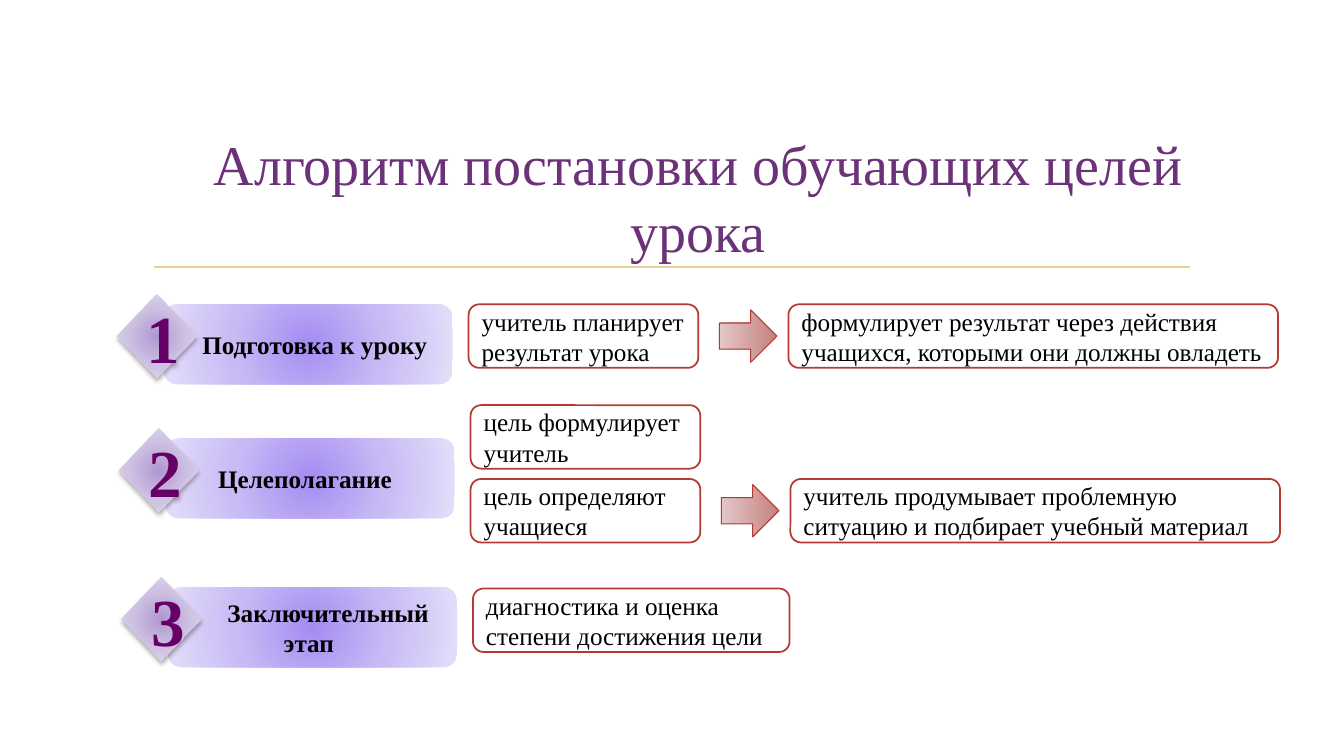
from dataclasses import dataclass

from lxml import etree
from pptx import Presentation
from pptx import util as u
from pptx.dml.color import RGBColor
from pptx.enum import shapes, text
from pptx.oxml import parse_xml
from pptx.oxml.ns import nsdecls, qn


@dataclass
class Theme:
    font: str = "Times New Roman"
    title: str = "6B327A"
    rule: str = "E8D191"
    ink: str = "000000"
    number: str = "660066"
    paper: str = "FFFFFF"
    outline: str = "B53A31"
    bar: tuple = ("A58CF2", "C7BAF5", "E4DEF9")
    diamond: tuple = ("B197D2", "CEC1E2", "E7E1F0")
    arrow: tuple = ("E4C8C8", "C5817E")
    title_size: int = 40
    number_size: int = 48
    body_size: int = 18


T = Theme()
LEFT, CENTER = text.PP_ALIGN.LEFT, text.PP_ALIGN.CENTER
KIND = shapes.MSO_SHAPE
RADIAL = '<a:path path="circle"><a:fillToRect l="50000" t="50000" r="50000" b="50000"/></a:path>'
LINEAR = '<a:lin ang="0" scaled="0"/>'


def add_shape(parent, kind, box, fill, outline=None, width=1.25, shade=RADIAL):
    sp = parent.add_shape(kind, *[u.Cm(v) for v in box])
    sp.shadow.inherit = False
    if isinstance(fill, tuple):
        stops = "".join(
            f'<a:gs pos="{100000 * i // (len(fill) - 1)}"><a:srgbClr val="{c}"/></a:gs>'
            for i, c in enumerate(fill))
        sp.fill.background()
        props = sp._element.spPr
        props.replace(props.find(qn("a:noFill")), parse_xml(
            f'<a:gradFill {nsdecls("a")} rotWithShape="1"><a:gsLst>{stops}</a:gsLst>{shade}</a:gradFill>'))
    else:
        sp.fill.solid()
        sp.fill.fore_color.rgb = RGBColor.from_string(fill)
    if outline:
        sp.line.color.rgb = RGBColor.from_string(outline)
        sp.line.width = u.Pt(width)
    else:
        sp.line.fill.background()
    return sp


def write(sp, words, size, color, align=LEFT, bold=False, anchor=text.MSO_ANCHOR.MIDDLE):
    tf = sp.text_frame
    tf.word_wrap = True
    tf.auto_size = text.MSO_AUTO_SIZE.NONE
    tf.vertical_anchor = anchor
    p = tf.paragraphs[0]
    p.alignment = align
    r = p.add_run()
    r.text = words
    r.font.name = T.font
    r.font.size = u.Pt(size)
    r.font.bold = bold
    r.font.color.rgb = RGBColor.from_string(color)
    return p


prs = Presentation()
prs.slide_width, prs.slide_height = u.Cm(33.87), u.Cm(19.05)
s = prs.slides.add_slide(prs.slide_layouts[5])

title = s.shapes.title
title.left, title.top, title.width, title.height = u.Cm(3.28), u.Cm(3.15), u.Cm(28.63), u.Cm(3.63)
write(title, "Алгоритм постановки обучающих целей урока", T.title_size, T.title,
      CENTER, anchor=text.MSO_ANCHOR.BOTTOM)

rule = s.shapes.add_connector(shapes.MSO_CONNECTOR.STRAIGHT, u.Cm(3.89), u.Cm(6.73), u.Cm(30), u.Cm(6.73))
rule.line.color.rgb = RGBColor.from_string(T.rule)
rule.line.width = u.Pt(1.25)
etree.SubElement(rule._element.spPr, qn("a:effectLst"))

stages = [
    (2.95, 7.42, "Подготовка к уроку", LEFT, 0.88, 0.25, 0),
    (3.0, 10.8, "Целеполагание", LEFT, 1.23, 0.25, 0),
    (3.06, 14.55, "Заключительный этап", CENTER, 0.25, 0.43, 0.97),
]
for number, (x, y, label, align, left, right, indent) in enumerate(stages, 1):
    group = s.shapes.add_group_shape().shapes
    bar = add_shape(group, KIND.ROUNDED_RECTANGLE, (x + 1.17, y + 0.25, 7.29, 2.01), T.bar)
    p = write(bar, label, T.body_size, T.ink, align, True)
    bar.text_frame.margin_left, bar.text_frame.margin_right = u.Cm(left), u.Cm(right)
    p._p.get_or_add_pPr().set("indent", str(u.Cm(indent)))

    diamond = add_shape(group, KIND.DIAMOND, (x, y, 2.01, 2.11), T.diamond)
    write(diamond, str(number), T.number_size, T.number, CENTER, True)
    diamond._element.spPr.find(qn("a:effectLst")).append(parse_xml(
        f'<a:outerShdw {nsdecls("a")} blurRad="{u.Pt(3.5)}" dist="{u.Pt(2.2)}" dir="5400000" rotWithShape="0">'
        f'<a:srgbClr val="{T.ink}"><a:alpha val="32000"/></a:srgbClr></a:outerShdw>'))

steps = [
    (0, 7.67, 5.79, "учитель планирует результат урока",
     "формулирует результат через действия учащихся, которыми они должны овладеть"),
    (1, 10.21, 5.79, "цель формулирует учитель", None),
    (1, 12.07, 5.79, "цель определяют учащиеся",
     "учитель продумывает проблемную ситуацию и подбирает учебный материал"),
    (2, 14.83, 7.98, "диагностика и оценка степени достижения цели", None),
]
for stage, y, width, action, result in steps:
    x = stages[stage][0]
    cards = [(8.86, width, action)]
    if result:
        cards.append((16.92, 12.34, result))
        add_shape(s.shapes, KIND.RIGHT_ARROW, (x + 15.18, y + 0.14, 1.45, 1.32),
                  T.arrow, T.outline, 0.75, LINEAR)
    for offset, card_width, words in cards:
        card = add_shape(s.shapes, KIND.ROUNDED_RECTANGLE, (x + offset, y, card_width, 1.6), T.paper, T.outline)
        write(card, words, T.body_size, T.ink)

prs.save("out.pptx")
